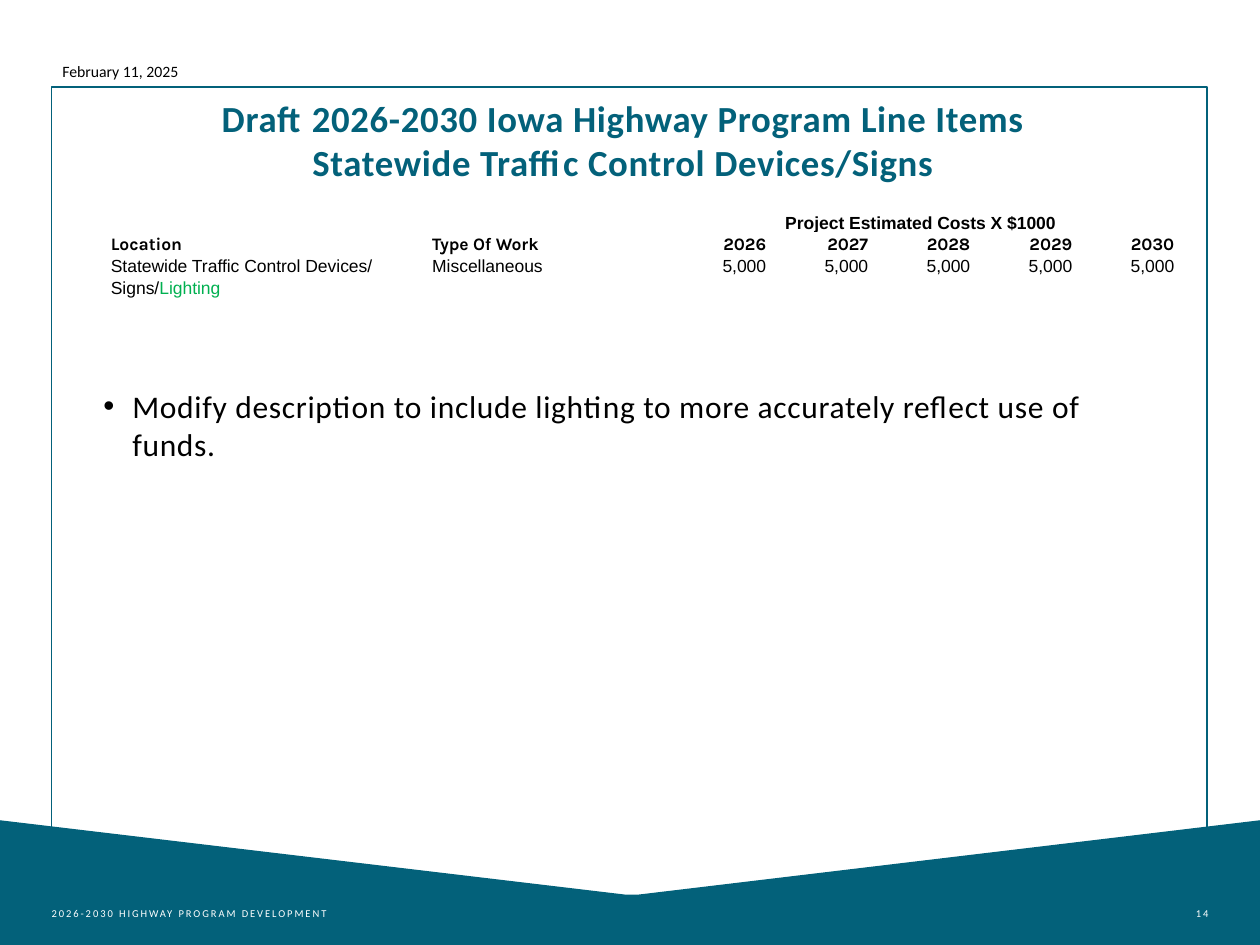
"""Build the statewide traffic control devices line item slide."""
from lxml import etree
from pptx import Presentation
from pptx.dml.color import RGBColor
from pptx.enum import shapes, text
from pptx.oxml import ns
from pptx.util import Inches, Pt

COLORS = {"teal": "03617A", "white": "FFFFFF", "black": "000000", "green": "00B050"}
LEFT, CENTER, RIGHT = text.PP_ALIGN.LEFT, text.PP_ALIGN.CENTER, text.PP_ALIGN.RIGHT


def add_run(paragraph, words, size, font, color, bold=False, tracking=0):
    run = paragraph.add_run()
    run.text = words
    run.font.size = Pt(size)
    run.font.name = font
    run.font.bold = bold
    run.font.color.rgb = RGBColor.from_string(COLORS[color])
    if tracking:
        run.font._element.set("spc", str(round(tracking * 100)))


def add_box(left, top, width, height, margins, anchor=text.MSO_ANCHOR.TOP):
    frame = slide.shapes.add_textbox(
        Inches(left), Inches(top), Inches(width), Inches(height)).text_frame
    frame.word_wrap = True
    frame.vertical_anchor = anchor
    frame.margin_left, frame.margin_right = [Inches(margin) for margin in margins]
    return frame


presentation = Presentation()
presentation.slide_width = Inches(10)
presentation.slide_height = Inches(7.5)
slide = presentation.slides.add_slide(presentation.slide_layouts[6])

outline = [(0, 6.51), (4.96, 7.1), (5.07, 7.1), (10, 6.51), (10, 7.5), (0, 7.5)]
points = [(Inches(x), Inches(y)) for x, y in outline]
builder = slide.shapes.build_freeform(*points[0])
builder.add_line_segments(points[1:], close=True)
band = builder.convert_to_shape()
band.shadow.inherit = False
band.fill.solid()
band.fill.fore_color.rgb = RGBColor.from_string(COLORS["teal"])
band.line.fill.background()

border = slide.shapes.add_shape(
    shapes.MSO_SHAPE.RECTANGLE, Inches(0.41), Inches(0.69), Inches(9.17), Inches(6.66))
border.shadow.inherit = False
border.fill.background()
border.line.color.rgb = RGBColor.from_string(COLORS["teal"])
border.line.width = Pt(1)

footers = [
    (0.41, 2.67, LEFT, "2026-2030 HIGHWAY PROGRAM DEVELOPMENT"),
    (8.62, 0.97, RIGHT, "14"),
]
for left, width, alignment, words in footers:
    footer = add_box(left, 6.95, width, 0.4, (0, 0), text.MSO_ANCHOR.BOTTOM)
    footer.paragraphs[0].alignment = alignment
    add_run(footer.paragraphs[0], words, 6, "Calibri", "white", tracking=1.1)

date = add_box(0.34, 0.44, 1.23, 0.25, (0.1, 0.1))
date.word_wrap = False
date.auto_size = text.MSO_AUTO_SIZE.SHAPE_TO_FIT_TEXT
date.paragraphs[0].alignment = CENTER
add_run(date.paragraphs[0], "February 11, 2025", 9, "Calibri", "black")

title = add_box(0.82, 0.71, 8.35, 0.83, (0, 0.1))
title_lines = ["Draft 2026-2030 Iowa Highway Program Line Items",
               "Statewide Traffic Control Devices/Signs"]
for index, line in enumerate(title_lines):
    paragraph = title.add_paragraph() if index else title.paragraphs[0]
    paragraph.alignment = CENTER
    add_run(paragraph, line, 21, "Calibri", "teal", bold=True, tracking=0.4)

body = add_box(0.82, 3.02, 8.35, 3.08, (0, 0.1))
properties = body.paragraphs[0]._p.get_or_add_pPr()
properties.set("marL", str(Inches(0.23)))
properties.set("indent", str(-Inches(0.23)))
etree.SubElement(properties, ns.qn("a:buFont"), typeface="Arial")
etree.SubElement(properties, ns.qn("a:buChar"), char="•")
add_run(body.paragraphs[0],
        "Modify description to include lighting to more accurately reflect use of funds.",
        18, "Calibri", "black", tracking=0.4)

years = [str(year) for year in range(2026, 2031)]
rows = [
    ["", "", "Project Estimated Costs X $1000"] + [""] * 4,
    ["Location", "Type Of Work"] + years,
    ["Statewide Traffic Control Devices/", "Miscellaneous"] + ["5,000"] * len(years),
    ["Signs/"] + [""] * 6,
]
column_widths = [2.55, 1.86] + [0.81] * len(years)
row_heights = [0.19, 0.17, 0.17, 0.17]
table = slide.shapes.add_table(
    len(rows), len(column_widths), Inches(0.87), Inches(1.66),
    Inches(sum(column_widths)), Inches(sum(row_heights))).table
table.first_row = False
table.horz_banding = False
for column, width in zip(table.columns, column_widths):
    column.width = Inches(width)
for row, height in zip(table.rows, row_heights):
    row.height = Inches(height)
table.cell(0, 2).merge(table.cell(0, 6))

for row_index, values in enumerate(rows):
    for column_index, value in enumerate(values):
        cell = table.cell(row_index, column_index)
        cell.margin_left = cell.margin_top = cell.margin_right = Inches(0.01)
        cell.margin_bottom = 0
        if row_index == 1:
            cell.fill.solid()
            cell.fill.fore_color.rgb = RGBColor.from_string(COLORS["white"])
        else:
            cell.fill.background()
        paragraph = cell.text_frame.paragraphs[0]
        if value:
            paragraph.alignment = RIGHT if column_index > 1 else LEFT
            add_run(paragraph, value, 10, "Karla" if row_index == 1 else "Arial",
                    "black", bold=row_index < 2)
        else:
            etree.SubElement(paragraph._p, ns.qn("a:endParaRPr"), sz="1000")

costs_heading = table.cell(0, 2)
costs_heading.vertical_anchor = text.MSO_ANCHOR.BOTTOM
costs_heading.text_frame.paragraphs[0].alignment = CENTER
add_run(table.cell(3, 0).text_frame.paragraphs[0], "Lighting", 10, "Arial", "green")

presentation.save("out.pptx")
